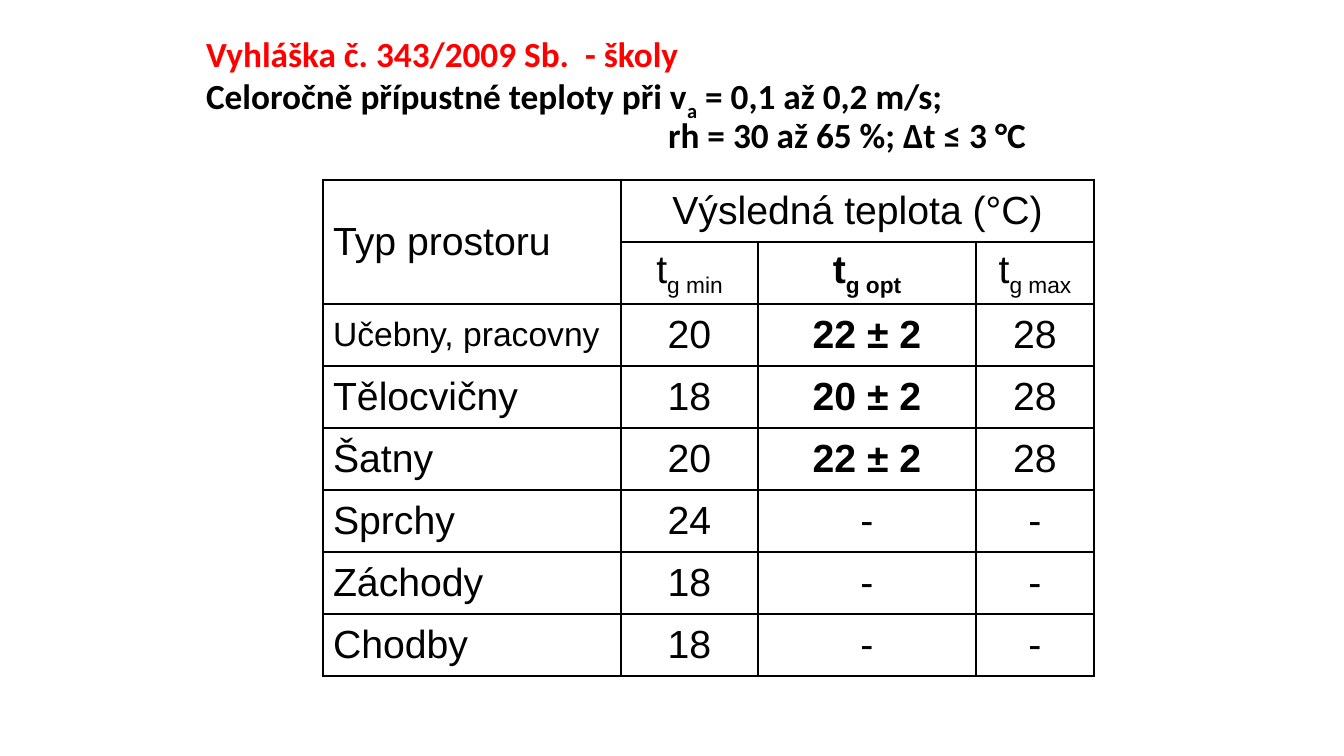
import pptx
import pptx.util
import pptx.dml.color
import pptx.enum.text
import lxml.etree
from dataclasses import dataclass

PX = 914400 / 100.8
ALIGN = pptx.enum.text.PP_ALIGN
MIDDLE = pptx.enum.text.MSO_ANCHOR.MIDDLE


@dataclass(frozen=True)
class Theme:
    black = pptx.dml.color.RGBColor(0x00, 0x00, 0x00)
    red = pptx.dml.color.RGBColor(0xFF, 0x00, 0x00)
    title_font = "Calibri"
    table_font = "Arial"
    title_size = 25.2
    cell_size = 28
    long_label_size = 24
    thin = 1
    thick = 2.25


def px(length):
    return pptx.util.Emu(round(length * PX))


def write(paragraph, text, font, size, color, bold, align):
    """Fill a paragraph; pieces between underscores become subscripts."""
    for i, piece in enumerate(text.split("_")):
        if piece:
            run = paragraph.add_run()
            run.text = piece
            if i % 2:
                run._r.get_or_add_rPr().set("baseline", "-25000")
    paragraph.alignment = align
    paragraph.font.name = font
    paragraph.font.size = pptx.util.Pt(size)
    paragraph.font.color.rgb = color
    paragraph.font.bold = bold


presentation = pptx.Presentation()
presentation.slide_width, presentation.slide_height = px(1344), px(756)
slide = presentation.slides.add_slide(presentation.slide_layouts[5])

# Title: decree name, then the conditions with an indented second line
title = slide.shapes.title
title.left, title.top, title.width, title.height = px(196), px(30), px(961), px(133)
heading = title.text_frame
heading.word_wrap = True
heading.auto_size = pptx.enum.text.MSO_AUTO_SIZE.NONE
heading.vertical_anchor = MIDDLE
heading_lines = [
    ("Vyhláška č. 343/2009 Sb.  - školy", Theme.red, 0),
    ("Celoročně přípustné teploty při v_a_ = 0,1 až 0,2 m/s;", Theme.black, 0),
    ("rh = 30 až 65 %; Δt ≤ 3 °C", Theme.black, 462),
]
for i, (text, color, indent) in enumerate(heading_lines):
    line = heading.add_paragraph() if i else heading.paragraphs[0]
    line.line_spacing = 0.9
    line._p.get_or_add_pPr().set("marL", str(px(indent)))
    write(line, text, Theme.title_font, Theme.title_size, color, True, ALIGN.LEFT)

# Table of permitted temperatures
rows = [
    ("Typ prostoru", "Výsledná teplota (°C)", "", ""),
    ("", "t_g min", "t_g opt", "t_g max"),
    ("Učebny, pracovny", "20", "22 ± 2", "28"),
    ("Tělocvičny", "18", "20 ± 2", "28"),
    ("Šatny", "20", "22 ± 2", "28"),
    ("Sprchy", "24", "-", "-"),
    ("Záchody", "18", "-", "-"),
    ("Chodby", "18", "-", "-"),
]
column_widths = [298, 137, 218, 118]
row_height = 62
last_row, last_column = len(rows) - 1, len(column_widths) - 1
temperatures = slide.shapes.add_table(
    len(rows), len(column_widths), px(323), px(180),
    px(sum(column_widths)), px(row_height * len(rows))).table
temperatures.first_row = temperatures.horz_banding = False
for column, width in zip(temperatures.columns, column_widths):
    column.width = px(width)
for row in temperatures.rows:
    row.height = px(row_height)
temperatures.cell(0, 0).merge(temperatures.cell(1, 0))
temperatures.cell(0, 1).merge(temperatures.cell(0, last_column))

for r, texts in enumerate(rows):
    for c, text in enumerate(texts):
        cell = temperatures.cell(r, c)
        cell.vertical_anchor = MIDDLE

        # Thick frame outside, thin lines inside
        properties = cell._tc.get_or_add_tcPr()
        outer_sides = {"lnL": c == 0, "lnR": c == last_column,
                       "lnT": r == 0, "lnB": r == last_row}
        for side, is_outer in outer_sides.items():
            border = lxml.etree.SubElement(properties, pptx.oxml.ns.qn("a:" + side))
            border.set("w", str(pptx.util.Pt(Theme.thick if is_outer else Theme.thin)))
            stroke = lxml.etree.SubElement(border, pptx.oxml.ns.qn("a:solidFill"))
            lxml.etree.SubElement(stroke, pptx.oxml.ns.qn("a:srgbClr")).set("val", str(Theme.black))
        cell.fill.background()

        if text:
            size = Theme.long_label_size if text == "Učebny, pracovny" else Theme.cell_size
            is_optimum = c == 2 and text != "-"
            write(cell.text_frame.paragraphs[0], text, Theme.table_font, size,
                  Theme.black, is_optimum, ALIGN.CENTER if c else ALIGN.LEFT)

presentation.save("out.pptx")
